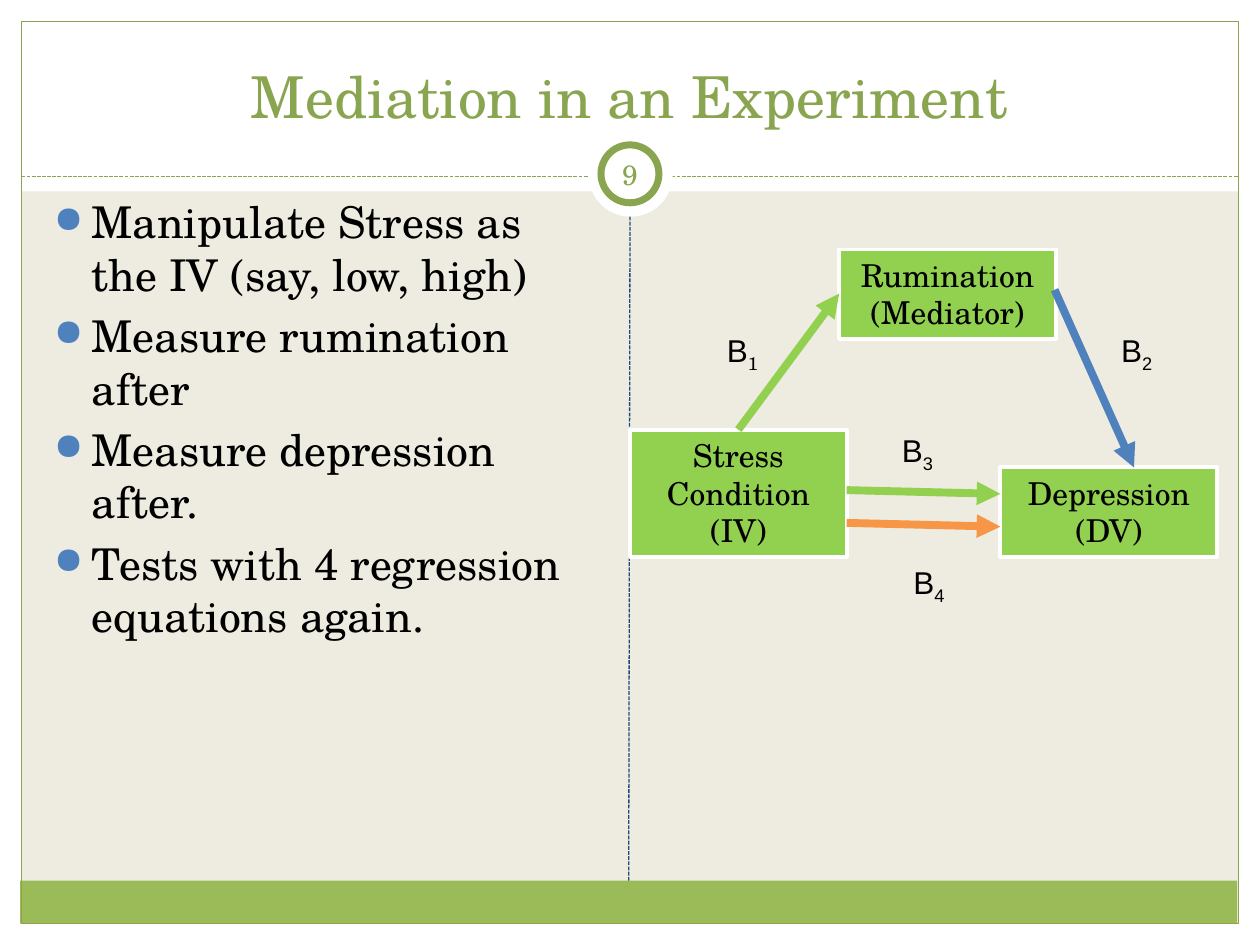
"""Build a slide about mediation in an experiment."""
import pptx
import pptx.dml.color
import pptx.enum.dml
import pptx.enum.shapes
import pptx.enum.text
import pptx.oxml
import pptx.oxml.ns
import pptx.util
from lxml import etree

Inches = pptx.util.Inches
RGBColor = pptx.dml.color.RGBColor
Shape = pptx.enum.shapes.MSO_SHAPE
Align = pptx.enum.text.PP_ALIGN
Anchor = pptx.enum.text.MSO_ANCHOR

WHITE = RGBColor(0xFF, 0xFF, 0xFF)
BLACK = RGBColor(0, 0, 0)
CREAM = RGBColor(0xEE, 0xEC, 0xE1)
OLIVE = RGBColor(0x89, 0xA5, 0x4F)
FOOTER_GREEN = RGBColor(0x9B, 0xBB, 0x59)
NAVY = RGBColor(0x1F, 0x49, 0x7D)
BLUE = RGBColor(0x4F, 0x81, 0xBD)
LIME = RGBColor(0x92, 0xD0, 0x50)
ORANGE = RGBColor(0xF7, 0x96, 0x46)


class SlideBuilder:
    serif = "TeX Gyre Schola"
    sans = "Arial"

    def __init__(self, slide):
        self.slide = slide
        slide.background.fill.solid()
        slide.background.fill.fore_color.rgb = CREAM

    def format_run(self, run, size, color=BLACK, font=None):
        run.font.name = font or self.serif
        run.font.size = pptx.util.Pt(size)
        run.font.color.rgb = color

    def format_frame(self, frame, size, color=BLACK, anchor=Anchor.TOP, align=Align.CENTER):
        frame.word_wrap = True
        frame.auto_size = pptx.enum.text.MSO_AUTO_SIZE.NONE
        frame.vertical_anchor = anchor
        for paragraph in frame.paragraphs:
            paragraph.alignment = align
            for run in paragraph.runs:
                self.format_run(run, size, color)

    def shape(self, kind, box, fill=None, line=None, width=0.75):
        shape = self.slide.shapes.add_shape(kind, *map(Inches, box))
        shape.shadow.inherit = False
        if fill is None:
            shape.fill.background()
        else:
            shape.fill.solid()
            shape.fill.fore_color.rgb = fill
        if line is None:
            shape.line.fill.background()
        else:
            shape.line.color.rgb = line
            shape.line.width = pptx.util.Pt(width)
        return shape

    def line(self, start, end, color, width):
        connector = self.slide.shapes.add_connector(
            pptx.enum.shapes.MSO_CONNECTOR.STRAIGHT, *map(Inches, start + end))
        connector.line.color.rgb = color
        connector.line.width = pptx.util.Pt(width)
        etree.SubElement(connector.element.spPr, pptx.oxml.ns.qn("a:effectLst"))
        return connector

    def dashed_line(self, start, end, color):
        connector = self.line(start, end, color, 0.75)
        connector.line.dash_style = pptx.enum.dml.MSO_LINE.SQUARE_DOT

    def arrow(self, start, end, color):
        connector = self.line(start, end, color, 4.5)
        outline = connector.line._get_or_add_ln()
        etree.SubElement(outline, pptx.oxml.ns.qn("a:tailEnd"), type="triangle")

    def title(self, text, box):
        title = self.slide.shapes.title
        title.left, title.top, title.width, title.height = map(Inches, box)
        title.text_frame.text = text
        self.format_frame(title.text_frame, 33, OLIVE, Anchor.BOTTOM)
        title.element.getparent().append(title.element)

    def text_box(self, box):
        return self.slide.shapes.add_textbox(*map(Inches, box)).text_frame

    def page_number(self, text, box):
        frame = self.text_box(box)
        frame.margin_left = frame.margin_right = Inches(0.05)
        frame.text = text
        self.format_frame(frame, 16, OLIVE, Anchor.MIDDLE)

    def bullets(self, items, box):
        frame = self.text_box(box)
        frame.text = "\n".join(items)
        self.format_frame(frame, 25, align=Align.LEFT)
        namespace = pptx.oxml.ns.nsdecls("a")
        for paragraph in frame.paragraphs:
            paragraph.space_before = pptx.util.Pt(5)
            properties = paragraph._p.get_or_add_pPr()
            properties.set("marL", str(Inches(0.3)))
            properties.set("indent", str(-Inches(0.3)))
            for markup in (
                f'<a:buClr {namespace}><a:srgbClr val="{BLUE}"/></a:buClr>',
                f'<a:buSzPct {namespace} val="85000"/>',
                f'<a:buChar {namespace} char="●"/>',
            ):
                properties.append(pptx.oxml.parse_xml(markup))

    def variable(self, text, box):
        shape = self.shape(Shape.RECTANGLE, box, LIME, WHITE, 2.25)
        shape.text_frame.text = text
        self.format_frame(shape.text_frame, 18)

    def coefficient(self, index, left, top, font):
        frame = self.text_box((left, top, 0.78, 0.4))
        frame.word_wrap = True
        paragraph = frame.paragraphs[0]
        for text, face in (("Β", self.sans), (index, font)):
            run = paragraph.add_run()
            run.text = text
            self.format_run(run, 18, font=face)
        run._r.get_or_add_rPr().set("baseline", "-25000")


def main():
    presentation = pptx.Presentation()
    presentation.slide_width = Inches(10)
    presentation.slide_height = Inches(7.5)
    slide = presentation.slides.add_slide(presentation.slide_layouts[5])
    builder = SlideBuilder(slide)

    for box, fill in (
        ((0, 7.33, 10, 0.17), WHITE),
        ((0, 0, 10, 1.52), WHITE),
        ((0, 0, 0.17, 7.5), WHITE),
        ((9.83, 0, 0.17, 7.5), WHITE),
        ((0.16, 6.99, 9.66, 0.34), FOOTER_GREEN),
    ):
        builder.shape(Shape.RECTANGLE, box, fill)
    builder.shape(Shape.RECTANGLE, (0.17, 0.17, 9.66, 7.16), line=OLIVE)
    builder.dashed_line((0.17, 1.4), (9.83, 1.4), OLIVE)
    builder.shape(Shape.OVAL, (4.67, 1.05, 0.67, 0.67), WHITE)
    builder.shape(Shape.OVAL, (4.77, 1.15, 0.46, 0.46), WHITE, OLIVE, 4)
    builder.dashed_line((4.99, 6.99), (5, 1.72), NAVY)

    builder.title("Mediation in an Experiment", (0.33, 0.25, 9.33, 0.83))
    builder.page_number("9", (4.75, 1.14, 0.5, 0.48))
    builder.bullets((
        "Manipulate Stress as the IV (say, low, high)",
        "Measure rumination after",
        "Measure depression after.",
        "Tests with 4 regression equations again.",
    ), (0.33, 1.5, 4.42, 5.12))

    builder.variable("Rumination (Mediator)", (6.66, 1.98, 1.72, 0.71))
    builder.variable("Stress Condition (IV)", (5, 3.41, 1.72, 1.01))
    builder.variable("Depression (DV)", (7.94, 3.71, 1.72, 0.71))

    builder.arrow((5.86, 3.41), (6.66, 2.33), LIME)
    builder.arrow((6.72, 3.89), (7.94, 3.92), LIME)
    builder.arrow((6.72, 4.15), (7.94, 4.18), ORANGE)
    builder.arrow((8.37, 2.3), (9, 3.71), BLUE)

    for index, left, top, font in (
        ("4", 7.15, 4.42, builder.sans),
        ("3", 7.06, 3.37, builder.sans),
        ("1", 5.67, 2.58, builder.serif),
        ("2", 8.8, 2.58, builder.sans),
    ):
        builder.coefficient(index, left, top, font)

    presentation.save("out.pptx")


if __name__ == "__main__":
    main()
